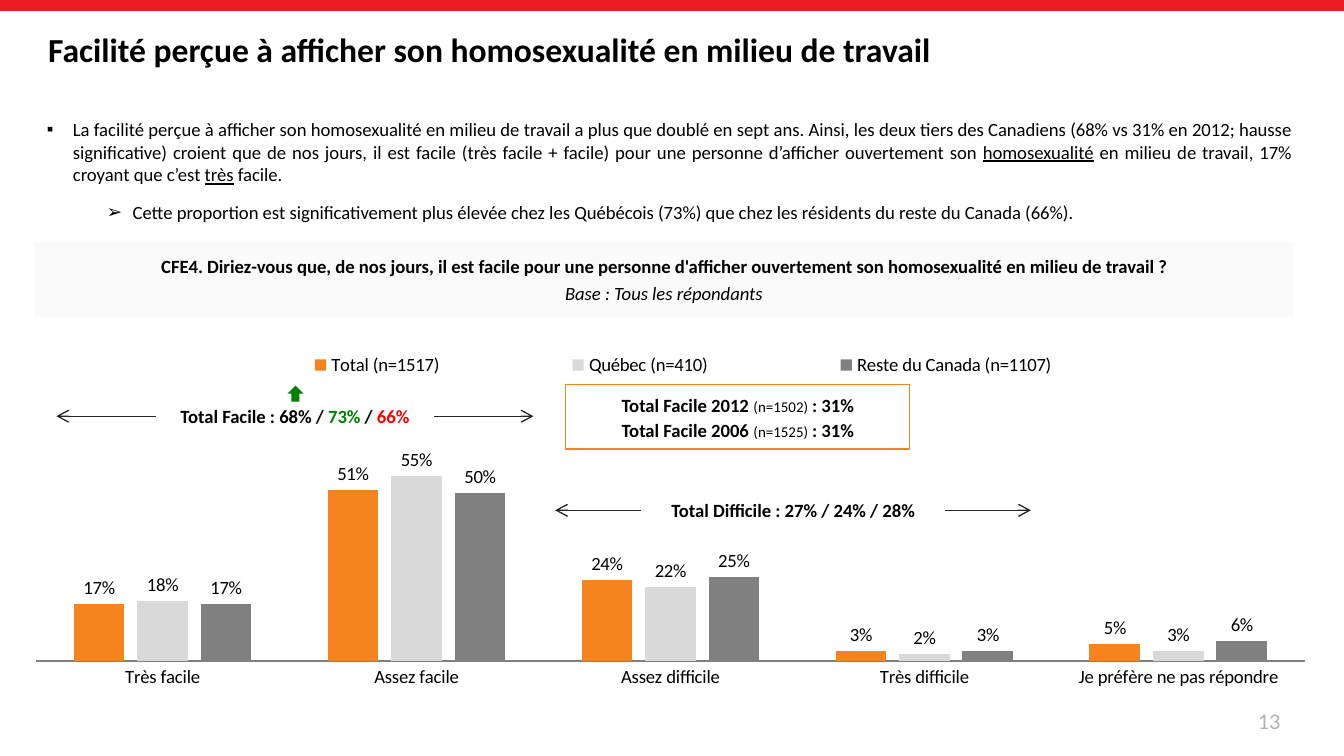
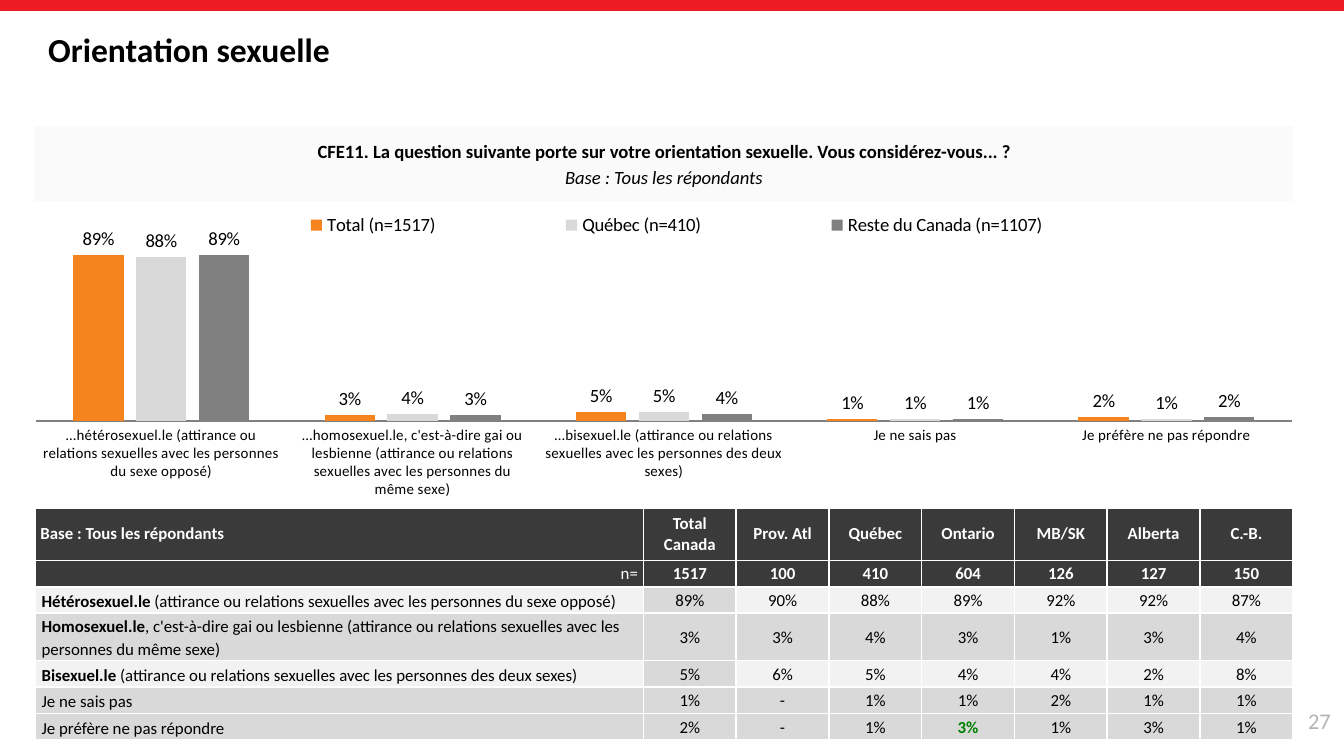
from lxml import etree
from pptx import Presentation
from pptx.chart.data import CategoryChartData
from pptx.dml.color import RGBColor
from pptx.enum.chart import XL_CHART_TYPE, XL_LABEL_POSITION, XL_LEGEND_POSITION, XL_TICK_MARK
from pptx.enum.shapes import MSO_CONNECTOR, MSO_SHAPE
from pptx.enum.text import MSO_ANCHOR, MSO_AUTO_SIZE, PP_ALIGN
from pptx.oxml.ns import qn
from pptx.util import Pt

BLACK = RGBColor(0x00, 0x00, 0x00)
WHITE = RGBColor(0xFF, 0xFF, 0xFF)
RED_BAND = RGBColor(0xED, 0x1C, 0x24)
RED = RGBColor(0xFF, 0x00, 0x00)
GREEN = RGBColor(0x00, 0x80, 0x00)
ORANGE = RGBColor(0xF5, 0x84, 0x1F)
LIGHT_GREY = RGBColor(0xD9, 0xD9, 0xD9)
MID_GREY = RGBColor(0x80, 0x80, 0x80)
PAGE_GREY = RGBColor(0xB3, 0xB3, 0xB3)
PANEL_GREY = RGBColor(0xFA, 0xFA, 0xFA)
ROW_GREY = RGBColor(0xF2, 0xF2, 0xF2)
HEADER_GREY = RGBColor(0x3A, 0x3A, 0x3A)
ARROW_GREY = RGBColor(0x26, 0x26, 0x26)

FONT = "Calibri"
WIDTH, HEIGHT = 720, 405
MARGIN = 18.7
CONTENT_WIDTH = 673.9
BASE = "Base : Tous les répondants"
SERIES = [("Total (n=1517)", ORANGE), ("Québec (n=410)", LIGHT_GREY),
          ("Reste du Canada (n=1107)", MID_GREY)]

EASE_CATEGORIES = ["Très facile", "Assez facile", "Assez difficile", "Très difficile",
                   "Je préfère ne pas répondre"]
EASE_VALUES = [(0.17, 0.51, 0.24, 0.03, 0.05), (0.18, 0.55, 0.22, 0.02, 0.03),
               (0.17, 0.5, 0.25, 0.03, 0.06)]
ORIENTATION_CATEGORIES = [
    "…hétérosexuel.le (attirance ou relations sexuelles avec les personnes du sexe opposé)",
    "…homosexuel.le, c'est-à-dire gai ou lesbienne (attirance ou relations sexuelles "
    "avec les personnes du même sexe)",
    "…bisexuel.le (attirance ou relations sexuelles avec les personnes des deux sexes)",
    "Je ne sais pas", "Je préfère ne pas répondre"]
ORIENTATION_VALUES = [(0.89, 0.03, 0.05, 0.01, 0.02), (0.88, 0.04, 0.05, 0.01, 0.01),
                      (0.89, 0.03, 0.04, 0.01, 0.02)]

REGIONS = ["Total\nCanada", "Prov. Atl", "Québec", "Ontario", "MB/SK", "Alberta", "C.-B."]
COUNTS = ["1517", "100", "410", "604", "126", "127", "150"]
# bold part, plain part, row fill, percentages
ORIENTATION_ROWS = [
    ("Hétérosexuel.le ", "(attirance ou relations sexuelles avec les personnes du sexe opposé)",
     ROW_GREY, "89% 90% 88% 89% 92% 92% 87%"),
    ("Homosexuel.le", ", c'est-à-dire gai ou lesbienne (attirance ou relations sexuelles "
     "avec les personnes du même sexe)", LIGHT_GREY, "3% 3% 4% 3% 1% 3% 4%"),
    ("Bisexuel.le", " (attirance ou relations sexuelles avec les personnes des deux sexes)",
     ROW_GREY, "5% 6% 5% 4% 4% 2% 8%"),
    ("", "Je ne sais pas", LIGHT_GREY, "1% - 1% 1% 2% 1% 1%"),
    ("", "Je préfère ne pas répondre", LIGHT_GREY, "2% - 1% 3% 1% 3% 1%"),
]
ROW_HEIGHTS = [28, 14.2, 14.2, 25.4, 14.2, 14.2, 14.2]


def in_points(box):
    return [Pt(length) for length in box]


def style_font(font, size=10, color=BLACK, **flags):
    font.name, font.size = FONT, Pt(size)
    font.color.rgb = color
    for flag, value in flags.items():
        setattr(font, flag, value)


def add_runs(paragraph, runs, **common):
    """Add (text, font options) pairs; common options apply to all of them."""
    for text, options in runs:
        run = paragraph.add_run()
        run.text = text
        style_font(run.font, **{**common, **options})


def set_margins(frame, left, top, right, bottom):
    frame.margin_left, frame.margin_top = Pt(left), Pt(top)
    frame.margin_right, frame.margin_bottom = Pt(right), Pt(bottom)


def add_panel(slide, box, kind=MSO_SHAPE.RECTANGLE, fill=None, line=None):
    shape = slide.shapes.add_shape(kind, *in_points(box))
    shape.shadow.inherit = False
    if fill is None:
        shape.fill.background()
    else:
        shape.fill.solid()
        shape.fill.fore_color.rgb = fill
    if line is None:
        shape.line.fill.background()
    else:
        shape.line.color.rgb = line
        shape.line.width = Pt(0.75)
    shape.text_frame.word_wrap = True
    shape.text_frame.vertical_anchor = MSO_ANCHOR.MIDDLE
    return shape


def add_label(slide, box, text, align, **options):
    frame = slide.shapes.add_textbox(*in_points(box)).text_frame
    frame.word_wrap = True
    frame.vertical_anchor = MSO_ANCHOR.MIDDLE
    frame.text = text
    frame.paragraphs[0].alignment = align
    style_font(frame.paragraphs[0].runs[0].font, **options)


def add_page(presentation, title, number, number_left):
    slide = presentation.slides.add_slide(presentation.slide_layouts[6])
    add_panel(slide, (0, 0, WIDTH, 5.8), fill=RED_BAND)
    add_label(slide, (MARGIN, 5.8, 588, 41), title, PP_ALIGN.LEFT, size=18, bold=True)
    add_label(slide, (number_left, 375, 168, 21.6), number, PP_ALIGN.RIGHT,
              size=12, color=PAGE_GREY)
    return slide


def add_question(slide, box, question):
    frame = add_panel(slide, box, fill=PANEL_GREY).text_frame
    frame.text = f"{question}\n{BASE}"
    for paragraph, flag in zip(frame.paragraphs, ("bold", "italic")):
        paragraph.alignment = PP_ALIGN.CENTER
        style_font(paragraph.runs[0].font, **{flag: True})
    frame.paragraphs[1].space_before = Pt(2)


def add_bullets(slide, box, items):
    """Each item is (bullet character, left indent, runs)."""
    frame = slide.shapes.add_textbox(*in_points(box)).text_frame
    frame.word_wrap = True
    for index, (character, indent, runs) in enumerate(items):
        paragraph = frame.add_paragraph() if index else frame.paragraphs[0]
        properties = paragraph._p.get_or_add_pPr()
        properties.set("marL", str(Pt(indent)))
        properties.set("indent", str(-Pt(14)))
        etree.SubElement(properties, qn("a:buFont")).set("typeface", "Arial")
        etree.SubElement(properties, qn("a:buChar")).set("char", character)
        paragraph.alignment = PP_ALIGN.JUSTIFY
        paragraph.space_after = Pt(6)
        if index:
            paragraph.space_before = Pt(2)
        add_runs(paragraph, runs)


def manual_layout(fractions, inner=False):
    layout = etree.Element(qn("c:layout"))
    manual = etree.SubElement(layout, qn("c:manualLayout"))
    settings = [("layoutTarget", "inner")] if inner else []
    settings += [("xMode", "edge"), ("yMode", "edge"), *zip("xywh", fractions)]
    for tag, value in settings:
        etree.SubElement(manual, qn(f"c:{tag}")).set("val", str(value))
    return layout


def replace_layout(parent, position, layout):
    for old in parent.findall(qn("c:layout")):
        parent.remove(old)
    parent.insert(position, layout)


def add_survey_chart(slide, box, categories, values, maximum, category_size, plot, legend):
    """plot and legend are (x, y, width, height) fractions of the chart."""
    data = CategoryChartData(number_format="0%")
    data.categories = categories
    for (name, _), numbers in zip(SERIES, values):
        data.add_series(name, numbers)
    chart = slide.shapes.add_chart(XL_CHART_TYPE.COLUMN_CLUSTERED, *in_points(box), data).chart
    style_font(chart.font, 9)
    chart.has_title = False

    bars = chart.plots[0]
    bars.gap_width, bars.overlap = 150, -25
    bars.vary_by_categories = False
    for series, (_, color) in zip(bars.series, SERIES):
        series.format.fill.solid()
        series.format.fill.fore_color.rgb = color
        labels = series.data_labels
        labels.show_value = True
        labels.number_format, labels.number_format_is_linked = "0%", False
        labels.position = XL_LABEL_POSITION.OUTSIDE_END
        style_font(labels.font)

    value_axis, category_axis = chart.value_axis, chart.category_axis
    value_axis.minimum_scale, value_axis.maximum_scale = 0, maximum
    value_axis.major_unit = 0.1
    value_axis.has_major_gridlines = False
    value_axis.visible = False
    category_axis.major_tick_mark = XL_TICK_MARK.NONE
    category_axis.format.line.color.rgb = MID_GREY
    style_font(category_axis.tick_labels.font, category_size)

    chart.has_legend = True
    chart.legend.position = XL_LEGEND_POSITION.TOP
    chart.legend.include_in_layout = False
    style_font(chart.legend.font)
    root = chart.element
    replace_layout(root.find(".//" + qn("c:plotArea")), 0, manual_layout(plot, inner=True))
    replace_layout(root.find(".//" + qn("c:legend")), 1, manual_layout(legend))


def add_range(slide, box, label_width, runs):
    """Double arrow across the box, with a label masking its middle."""
    left, top, width, height = box
    middle = top + height / 2
    arrow = slide.shapes.add_connector(
        MSO_CONNECTOR.STRAIGHT, *in_points((left, middle, left + width, middle)))
    arrow.line.color.rgb = ARROW_GREY
    arrow.line.width = Pt(0.75)
    properties = arrow.element.spPr
    for end in ("a:headEnd", "a:tailEnd"):
        etree.SubElement(properties.find(qn("a:ln")), qn(end)).set("type", "arrow")
    etree.SubElement(properties, qn("a:effectLst"))

    label_left = left + (width - label_width) / 2
    frame = add_panel(slide, (label_left, top, label_width, height), fill=WHITE).text_frame
    set_margins(frame, 3, 3, 3, 3)
    frame.auto_size = MSO_AUTO_SIZE.SHAPE_TO_FIT_TEXT
    frame.vertical_anchor = MSO_ANCHOR.TOP
    frame.paragraphs[0].alignment = PP_ALIGN.CENTER
    add_runs(frame.paragraphs[0], runs, bold=True)


def add_history(slide, box, rows):
    frame = add_panel(slide, box, MSO_SHAPE.FLOWCHART_PROCESS, line=ORANGE).text_frame
    for index, (year, count, share) in enumerate(rows):
        paragraph = frame.add_paragraph() if index else frame.paragraphs[0]
        paragraph.alignment = PP_ALIGN.CENTER
        add_runs(paragraph, [(f"Total Facile {year}", {}), (" ", {"size": 11}),
                             (f"(n={count})", {"size": 8, "bold": False}),
                             (" ", {"size": 9, "bold": False}), (f": {share}", {})], bold=True)


def style_cell(cell, fill, margins, borders):
    """borders maps the sides L, R, T, B to line widths."""
    cell.vertical_anchor = MSO_ANCHOR.MIDDLE
    set_margins(cell, *margins)
    properties = cell._tc.get_or_add_tcPr()
    for side, width in borders.items():
        line = etree.SubElement(properties, qn(f"a:ln{side}"), w=str(Pt(width)))
        solid = etree.SubElement(line, qn("a:solidFill"))
        etree.SubElement(solid, qn("a:srgbClr")).set("val", str(WHITE))
    cell.fill.solid()
    cell.fill.fore_color.rgb = fill


def add_orientation_table(slide, box):
    texts = [[BASE, *REGIONS], ["n=", *COUNTS]]
    texts += [[bold + plain, *shares.split()] for bold, plain, _, shares in ORIENTATION_ROWS]
    table = slide.shapes.add_table(len(texts), len(texts[0]), *in_points(box)).table
    table.first_row = table.horz_banding = False
    region_width = 49.7
    for index, column in enumerate(table.columns):
        column.width = Pt(region_width if index else box[2] - region_width * len(REGIONS))

    for r, row in enumerate(texts):
        table.rows[r].height = Pt(ROW_HEIGHTS[r])
        header = r < 2
        for c, text in enumerate(row):
            cell = table.cell(r, c)
            borders = {"L": 1, "R": 1, "T": 1.5 if r == 2 else 1, "B": 1.5 if r == 1 else 1}
            if c == 0 and header:
                del borders["TB"[1 - r]]
            fill = HEADER_GREY if header else LIGHT_GREY if c == 1 else ORIENTATION_ROWS[r - 2][2]
            margins = (3 if header else 3.6, 0) * 2 if c == 0 else (0.7, 0.7 if r else 0, 0.7, 0)
            style_cell(cell, fill, margins, borders)

            if c == 0 and not header:
                bold, plain = ORIENTATION_ROWS[r - 2][:2]
                paragraph = cell.text_frame.paragraphs[0]
                paragraph.line_spacing = 1.15
                add_runs(paragraph, [(part, {"bold": part == bold})
                                     for part in (bold, plain) if part], size=9)
                continue
            significant = (r, c) == (6, 4)
            color = WHITE if header else GREEN if significant else BLACK
            cell.text_frame.text = text
            for paragraph in cell.text_frame.paragraphs:
                if c:
                    paragraph.alignment = PP_ALIGN.CENTER
                elif r == 1:
                    paragraph.alignment = PP_ALIGN.RIGHT
                style_font(paragraph.runs[0].font, 9, color,
                           bold=significant or (header and (r, c) != (1, 0)))


def build_ease_slide(presentation):
    slide = add_page(presentation, "Facilité perçue à afficher son homosexualité en milieu de travail",
                     "13", 525)
    underlined = {"underline": True}
    add_bullets(slide, (18, 59.8, 681, 69), [
        ("▪", 14, [
            ("La facilité perçue à afficher son homosexualité en milieu de travail a plus que doublé "
             "en sept ans. Ainsi, les deux tiers des Canadiens (68% vs 31% en 2012; hausse "
             "significative) croient que de nos jours, il est facile (très facile + facile) pour une "
             "personne d’afficher ouvertement son ", {}),
            ("homosexualité", underlined), (" en milieu de travail, 17% croyant que c’est ", {}),
            ("très", underlined), (" facile. ", {})]),
        ("➢", 46, [("Cette proportion est significativement plus élevée chez les Québécois (73%) "
                    "que chez les résidents du reste du Canada (66%).", {})])])
    add_question(slide, (MARGIN, 129.6, CONTENT_WIDTH, 40.3),
                 "CFE4. Diriez-vous que, de nos jours, il est facile pour une personne d'afficher "
                 "ouvertement son homosexualité en milieu de travail ?")
    add_survey_chart(slide, (MARGIN, 166.3, 681, 208.8), EASE_CATEGORIES, EASE_VALUES, 0.8, 10,
                     plot=(0, 0.21, 1, 0.69), legend=(0.12, 0.1, 0.78, 0.08))
    add_range(slide, (30.2, 214, 255.6, 18), 149,
              [("Total Facile : 68% / ", {}), ("73%", {"color": GREEN}), (" / ", {}),
               ("66%", {"color": RED})])
    add_range(slide, (297.4, 264.4, 254.9, 18), 162.7, [("Total Difficile : 27% / 24% / 28%", {})])
    add_panel(slide, (154, 206.6, 8.6, 8.6), MSO_SHAPE.UP_ARROW, fill=GREEN)
    add_history(slide, (303.1, 206, 184.3, 34.6), [("2012", 1502, "31%"), ("2006", 1525, "31%")])


def build_orientation_slide(presentation):
    slide = add_page(presentation, "Orientation sexuelle", "27", 552)
    add_question(slide, (MARGIN, 67.7, CONTENT_WIDTH, 40.3),
                 "CFE11. La question suivante porte sur votre orientation sexuelle. "
                 "Vous considérez-vous... ?")
    add_survey_chart(slide, (MARGIN, 106.6, CONTENT_WIDTH, 175), ORIENTATION_CATEGORIES,
                     ORIENTATION_VALUES, 1, 8, plot=(0, 0.11, 1, 0.57),
                     legend=(0.12, 0.03, 0.78, 0.1))
    add_orientation_table(slide, (MARGIN, 272.2, CONTENT_WIDTH, sum(ROW_HEIGHTS)))


def main():
    presentation = Presentation()
    presentation.slide_width, presentation.slide_height = Pt(WIDTH), Pt(HEIGHT)
    build_ease_slide(presentation)
    build_orientation_slide(presentation)
    presentation.save("out.pptx")


if __name__ == "__main__":
    main()
